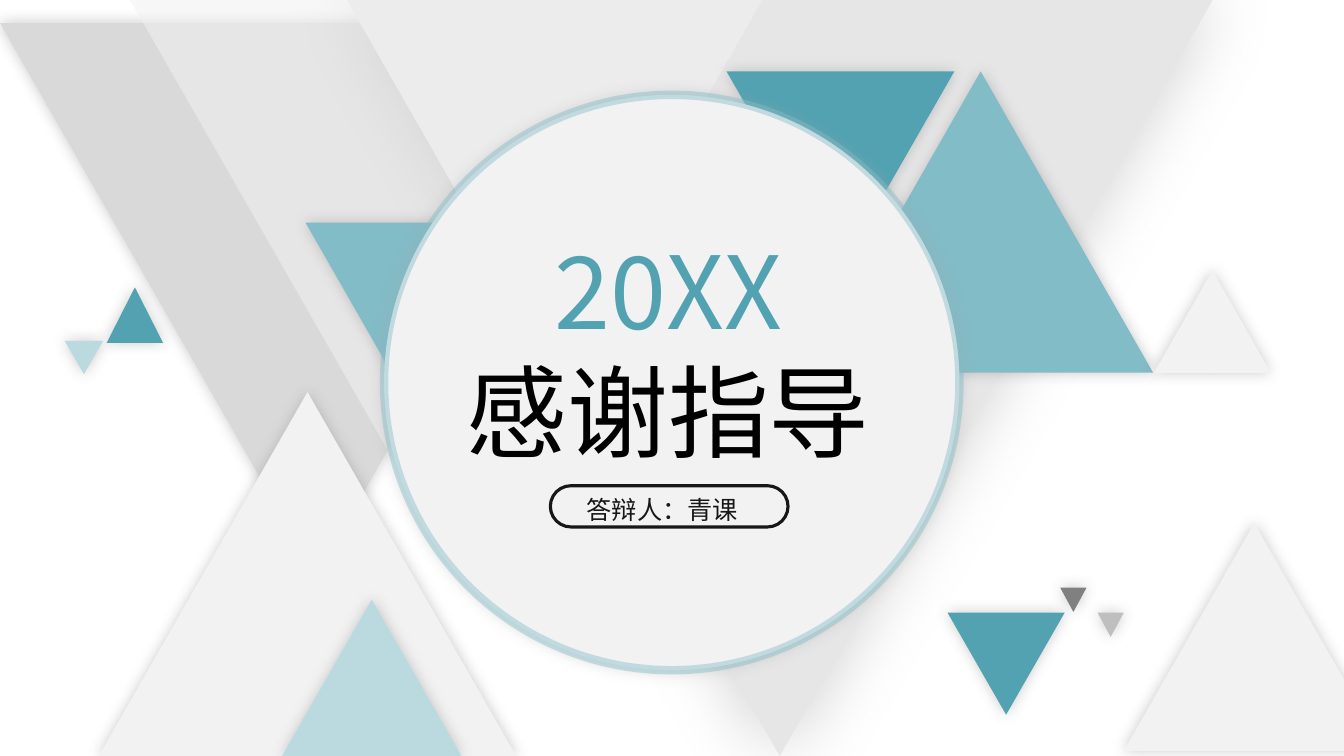
from dataclasses import dataclass

from lxml.etree import SubElement
from pptx import Presentation
from pptx.dml.color import RGBColor
from pptx.enum.shapes import MSO_SHAPE as Preset
from pptx.enum.text import MSO_ANCHOR as Anchor, PP_ALIGN as Align
from pptx.oxml.ns import qn
from pptx.shapes.autoshape import Shape
from pptx.slide import Slide
from pptx.util import Cm, Pt


@dataclass(frozen=True)
class Theme:
    font: str = "Noto Sans CJK SC"
    teal: str = "52A2B2"
    soft_teal: str = "82BCC7"
    pale_teal: str = "BADAE0"
    paper: str = "F2F2F2"
    mist: str = "E7E6E6"
    silver: str = "D9D9D9"
    light_gray: str = "BFBFBF"
    disc_shadow: str = "A6A6A6"
    gray: str = "808080"
    ink: str = "181717"
    black: str = "000000"
    title_size: int = 72
    presenter_size: int = 18


THEME = Theme()


@dataclass(frozen=True)
class Box:
    """Left, top, width and height in centimetres."""
    left: float
    top: float
    width: float
    height: float

    def lengths(self) -> tuple[Cm, Cm, Cm, Cm]:
        return Cm(self.left), Cm(self.top), Cm(self.width), Cm(self.height)


@dataclass(frozen=True)
class Triangle:
    box: Box
    color: str
    points_down: bool = False
    opacity: int = 100
    blur: int = 10


@dataclass(frozen=True)
class Line:
    text: str
    color: str
    size: int


TRIANGLES = [
    Triangle(Box(0, 0.58, 15.93, 13.92), THEME.silver, points_down=True),
    Triangle(Box(8.74, 0, 21.82, 19.05), THEME.mist, points_down=True, blur=53),
    Triangle(Box(2.49, 9.88, 10.52, 9.17), THEME.paper),
    Triangle(Box(7.11, 15.11, 4.52, 3.94), THEME.pale_teal),
    Triangle(Box(3.28, 0, 15.93, 13.92), THEME.paper, points_down=True, opacity=54, blur=0),
    Triangle(Box(20.37, 1.8, 8.69, 7.59), THEME.soft_teal),
    Triangle(Box(7.7, 5.61, 8.99, 7.85), THEME.soft_teal, points_down=True),
    Triangle(Box(23.88, 15.44, 2.95, 2.57), THEME.teal, points_down=True),
    Triangle(Box(29.08, 6.81, 2.95, 2.59), THEME.paper),
    Triangle(Box(18.31, 1.8, 5.74, 5), THEME.teal, points_down=True),
    Triangle(Box(2.69, 7.24, 1.42, 1.4), THEME.teal),
    Triangle(Box(1.63, 8.59, 0.97, 0.84), THEME.pale_teal, points_down=True),
    Triangle(Box(26.72, 14.81, 0.66, 0.61), THEME.gray, points_down=True),
    Triangle(Box(27.66, 15.44, 0.66, 0.61), THEME.light_gray, points_down=True),
    Triangle(Box(28.32, 13.18, 6.58, 5.74), THEME.paper),
]


def set_opacity(color_parent, percent: int) -> None:
    color = color_parent.find(f".//{qn('a:srgbClr')}")
    SubElement(color, qn("a:alpha"), val=str(percent * 1000))


def add_glow_shadow(shape: Shape, color: str, blur: int) -> None:
    """Put an even, blurred shadow of 40 % opacity around the shape."""
    effects = shape._element.spPr.find(qn("a:effectLst"))
    shadow = SubElement(effects, qn("a:outerShdw"), blurRad=str(Pt(blur)),
                        dist="0", dir="0", algn="ctr", rotWithShape="0")
    SubElement(shadow, qn("a:srgbClr"), val=color)
    set_opacity(shadow, 40)


def add_plain_shape(slide: Slide, preset: Preset, box: Box, fill: str | None) -> Shape:
    shape = slide.shapes.add_shape(preset, *box.lengths())
    shape.shadow.inherit = False
    shape.line.fill.background()
    if fill is None:
        shape.fill.background()
    else:
        shape.fill.solid()
        shape.fill.fore_color.rgb = RGBColor.from_string(fill)
    return shape


def set_outline(shape: Shape, color: str, width: float) -> None:
    shape.line.color.rgb = RGBColor.from_string(color)
    shape.line.width = Pt(width)


def add_triangle(slide: Slide, triangle: Triangle) -> None:
    shape = add_plain_shape(slide, Preset.ISOSCELES_TRIANGLE, triangle.box, triangle.color)
    shape.rotation = 180 if triangle.points_down else 0
    if triangle.opacity < 100:
        set_opacity(shape._element.spPr.find(qn("a:solidFill")), triangle.opacity)
    if triangle.blur:
        add_glow_shadow(shape, THEME.gray, triangle.blur)


def add_disc(slide: Slide) -> None:
    disc = add_plain_shape(slide, Preset.OVAL, Box(9.68, 2.39, 14.5, 14.5), THEME.paper)
    set_outline(disc, THEME.soft_teal, 6)
    set_opacity(disc.line._ln, 43)
    add_glow_shadow(disc, THEME.disc_shadow, 10)


def add_centred_text(slide: Slide, box: Box, lines: list[Line]) -> None:
    frame = slide.shapes.add_textbox(*box.lengths()).text_frame
    frame.word_wrap = True
    frame.vertical_anchor = Anchor.MIDDLE
    for index, line in enumerate(lines):
        paragraph = frame.add_paragraph() if index else frame.paragraphs[0]
        paragraph.alignment = Align.CENTER
        paragraph.line_spacing = Pt(line.size * 1.2)
        run = paragraph.add_run()
        run.text = line.text
        run.font.name = THEME.font
        run.font.size = Pt(line.size)
        run.font.color.rgb = RGBColor.from_string(line.color)
        east_asian = SubElement(run.font._element, qn("a:ea"))
        east_asian.set("typeface", THEME.font)


def main() -> None:
    presentation = Presentation()
    presentation.slide_width, presentation.slide_height = Cm(33.87), Cm(19.05)
    slide = presentation.slides.add_slide(presentation.slide_layouts[6])

    for triangle in TRIANGLES:
        add_triangle(slide, triangle)
    add_disc(slide)
    add_centred_text(slide, Box(10.82, 5.61, 12.04, 6.4), [
        Line("20XX", THEME.teal, THEME.title_size),
        Line("感谢指导", THEME.black, THEME.title_size),
    ])
    add_centred_text(slide, Box(13.87, 12.32, 5.64, 1.02), [
        Line("答辩人：青课", THEME.ink, THEME.presenter_size),
    ])
    pill = add_plain_shape(slide, Preset.ROUNDED_RECTANGLE, Box(13.87, 12.24, 5.99, 1.04), None)
    pill.adjustments[0] = 0.5
    set_outline(pill, THEME.ink, 2.25)

    presentation.save("out.pptx")


if __name__ == "__main__":
    main()
